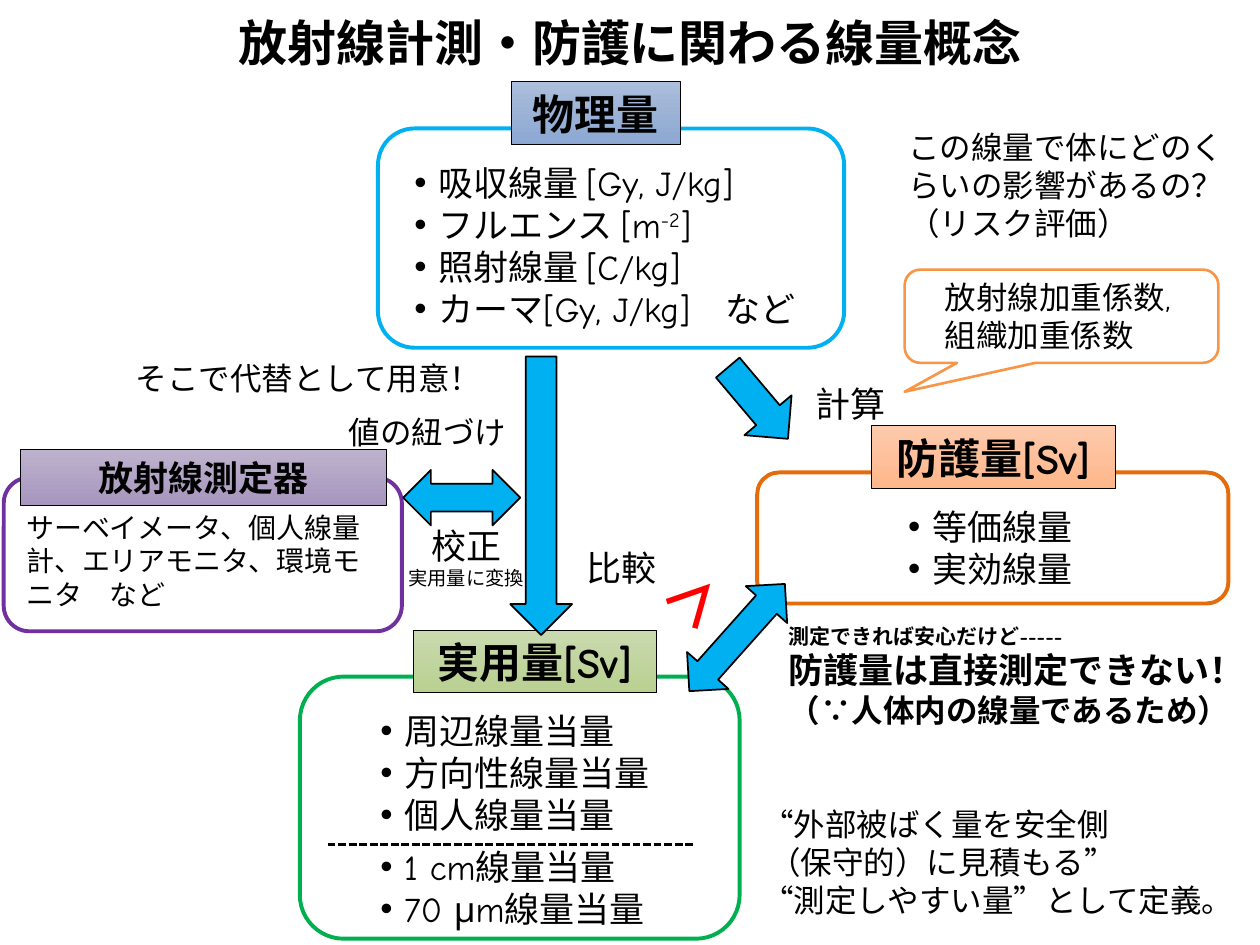
from lxml import etree
from pptx import Presentation
from pptx.dml.color import RGBColor
from pptx.enum.dml import MSO_LINE
from pptx.enum.shapes import MSO_CONNECTOR, MSO_SHAPE
from pptx.enum.text import MSO_ANCHOR, MSO_AUTO_SIZE, PP_ALIGN
from pptx.oxml.ns import qn
from pptx.util import Emu, Pt

EMU_PER_PX = 9144
FONT = "Comic Neue"
BLACK, RED, SKY, ORANGE = "000000", "FF0000", "00B0F0", "F79646"
CENTER, LEFT = PP_ALIGN.CENTER, PP_ALIGN.LEFT
TOP, MIDDLE = MSO_ANCHOR.TOP, MSO_ANCHOR.MIDDLE
GROW = MSO_AUTO_SIZE.SHAPE_TO_FIT_TEXT
RECT, ROUNDED = MSO_SHAPE.RECTANGLE, MSO_SHAPE.ROUNDED_RECTANGLE
CALLOUT = MSO_SHAPE.ROUNDED_RECTANGULAR_CALLOUT
DOWN, BOTH_WAYS = MSO_SHAPE.DOWN_ARROW, MSO_SHAPE.LEFT_RIGHT_ARROW
STRAIGHT = MSO_CONNECTOR.STRAIGHT
DASH = MSO_LINE.SQUARE_DOT

QUANTITIES = [
    ((300, 102, 370, 174), SKY,
     (406, 65, 134, 50), "物理量", 24, ("ABBEDB", "8CA7D2")),
    ((238, 537, 349, 208), "00B050",
     (328, 500, 193, 50), "実用量[Sv]", 24, ("CADAAF", "B9D091")),
    ((601, 375, 374, 104), "E46C0A",
     (692, 338, 193, 50), "防護量[Sv]", 24, ("FDCAAC", "FFB68A")),
    ((3, 379, 316, 122), "7030A0",
     (16, 357, 291, 44), "放射線測定器", 20, ("BDB2CD", "A796BE")),
]

BULLET_LISTS = [
    ((319, 123, 354, 145), ["吸収線量 [Gy, J/kg]", ("フルエンス [m", "-2", "]"),
                            "照射線量 [C/kg]", "カーマ[Gy, J/kg]　など"]),
    ((292, 558, 276, 187), ["周辺線量当量", "方向性線量当量", "個人線量当量",
                            "1 cm線量当量", "70 μm線量当量"]),
    ((711, 396, 189, 77), ["等価線量", "実効線量"]),
]

NOTES = [
    ((711, 97, 284, 101), 18, ["この線量で体にどのくらいの影響があるの？", "（リスク評価）"]),
    ((740, 216, 211, 71), 18, ["放射線加重係数,", "組織加重係数"]),
    ((456, 429, 81, 44), 20, ["比較"]),
    ((637, 299, 81, 44), 20, ["計算"]),
    ((98, 280, 435, 40), 18, ["そこで代替として用意！"]),
    ((267, 323, 167, 40), 18, ["値の紐づけ"]),
    ((595, 634, 417, 101), 18, ["“外部被ばく量を安全側", " （保守的）に見積もる”",
                                "“測定しやすい量”として定義。"]),
    ((11, 400, 298, 91), 16, ["サーベイメータ、個人線量計、エリアモニタ、環境モニタ　など"]),
]

ARROWS = [
    (DOWN, (405, 283, 49, 221), 0),
    (DOWN, (577, 283, 49, 74), 319.8),
    (BOTH_WAYS, (528, 484, 114, 44), 311.7),
    (BOTH_WAYS, (320, 373, 93, 44), 0),
]


def px(*lengths):
    return [Emu(length * EMU_PER_PX) for length in lengths]


def color(value):
    return RGBColor.from_string(value)


def format_text(paragraph, size, bold=False, ink=BLACK, align=LEFT):
    paragraph.alignment = align
    paragraph.font.name = FONT
    paragraph.font.size = Pt(size)
    paragraph.font.bold = bold
    paragraph.font.color.rgb = color(ink)


def add_lines(frame, lines):
    paragraphs = []
    for index, line in enumerate(lines):
        paragraph = frame.paragraphs[0] if index == 0 else frame.add_paragraph()
        parts = line if isinstance(line, tuple) else (line,)
        for position, part in enumerate(parts):
            run = paragraph.add_run()
            run.text = part
            if position == 1:
                run.font._element.set("baseline", "30000")
        paragraphs.append(paragraph)
    return paragraphs


def add_text(slide, box, lines):
    holder = slide.shapes.add_textbox(*px(*box))
    holder.text_frame.word_wrap = True
    holder.text_frame.auto_size = GROW
    return holder, add_lines(holder.text_frame, lines)


def add_note(slide, box, sizes, lines, **style):
    holder, paragraphs = add_text(slide, box, lines)
    for paragraph, size in zip(paragraphs, sizes):
        format_text(paragraph, size, **style)
    return holder


def add_bullets(slide, box, items):
    paragraphs = add_text(slide, box, items)[1]
    indent = px(19)[0]
    for paragraph in paragraphs:
        properties = paragraph._p.get_or_add_pPr()
        properties.set("marL", str(indent))
        properties.set("indent", str(-indent))
        etree.SubElement(properties, qn("a:buFont")).set("typeface", "Arial")
        etree.SubElement(properties, qn("a:buChar")).set("char", "•")
        format_text(paragraph, 20)
    return paragraphs


def add_outline(slide, kind, box, line, weight):
    shape = slide.shapes.add_shape(kind, *px(*box))
    shape.shadow.inherit = False
    shape.fill.background()
    shape.line.color.rgb = color(line)
    shape.line.width = Pt(weight)
    return shape


def add_heading(slide, box, text, size, shades):
    heading = add_outline(slide, RECT, box, BLACK, 0.5)
    heading.fill.gradient()
    heading.fill.gradient_angle = 270
    for stop, shade in zip(heading.fill.gradient_stops, shades):
        stop.color.rgb = color(shade)
    frame = heading.text_frame
    frame.vertical_anchor = TOP
    frame.auto_size = GROW
    format_text(add_lines(frame, [text])[0], size, bold=True, align=CENTER)


def add_arrow(slide, kind, box, rotation):
    arrow = add_outline(slide, kind, box, BLACK, 1)
    arrow.fill.solid()
    arrow.fill.fore_color.rgb = color(SKY)
    arrow.rotation = rotation


def add_divider(slide, start, end):
    divider = slide.shapes.add_connector(STRAIGHT, *px(*start, *end))
    divider.line.color.rgb = color(BLACK)
    divider.line.width = Pt(1.5)
    divider.line.dash_style = DASH
    etree.SubElement(divider._element.spPr, qn("a:effectLst"))


def set_title(slide, box, text):
    title = slide.shapes.title
    title.left, title.top, title.width, title.height = px(*box)
    title.text_frame.vertical_anchor = MIDDLE
    heading = add_lines(title.text_frame, [text])[0]
    heading.line_spacing = 0.9
    format_text(heading, 28, bold=True, align=CENTER)


def main():
    presentation = Presentation()
    presentation.slide_width, presentation.slide_height = px(1000, 750)
    slide = presentation.slides.add_slide(presentation.slide_layouts[5])
    set_title(slide, (69, -3, 862, 79), "放射線計測・防護に関わる線量概念")

    for frame_box, line, heading_box, text, size, shades in QUANTITIES:
        add_outline(slide, ROUNDED, frame_box, line, 2.25)
        add_heading(slide, heading_box, text, size, shades)
    physical, operational, protection = [
        add_bullets(slide, box, items) for box, items in BULLET_LISTS]
    operational[2].space_after = Pt(6)
    add_divider(slide, (260, 670), (551, 670))

    factors = add_outline(slide, CALLOUT, (718, 214, 249, 74), ORANGE, 1.5)
    factors.adjustments[0], factors.adjustments[1] = -0.5, 0.81
    for arrow in ARROWS:
        add_arrow(slide, *arrow)

    for box, size, lines in NOTES:
        add_note(slide, box, [size] * len(lines), lines)
    add_note(slide, (314, 411, 112, 62), [20, 11], ["校正", "実用量に変換"], align=CENTER)
    add_note(slide, (616, 490, 435, 94), [12, 20, 18],
             ["測定できれば安心だけど-----", "防護量は直接測定できない！",
              "（∵人体内の線量であるため）"], bold=True)
    greater = add_note(slide, (517, 438, 81, 64), [32], ["＞"], bold=True, ink=RED)
    greater.rotation = 313.3

    presentation.save("out.pptx")


if __name__ == "__main__":
    main()
